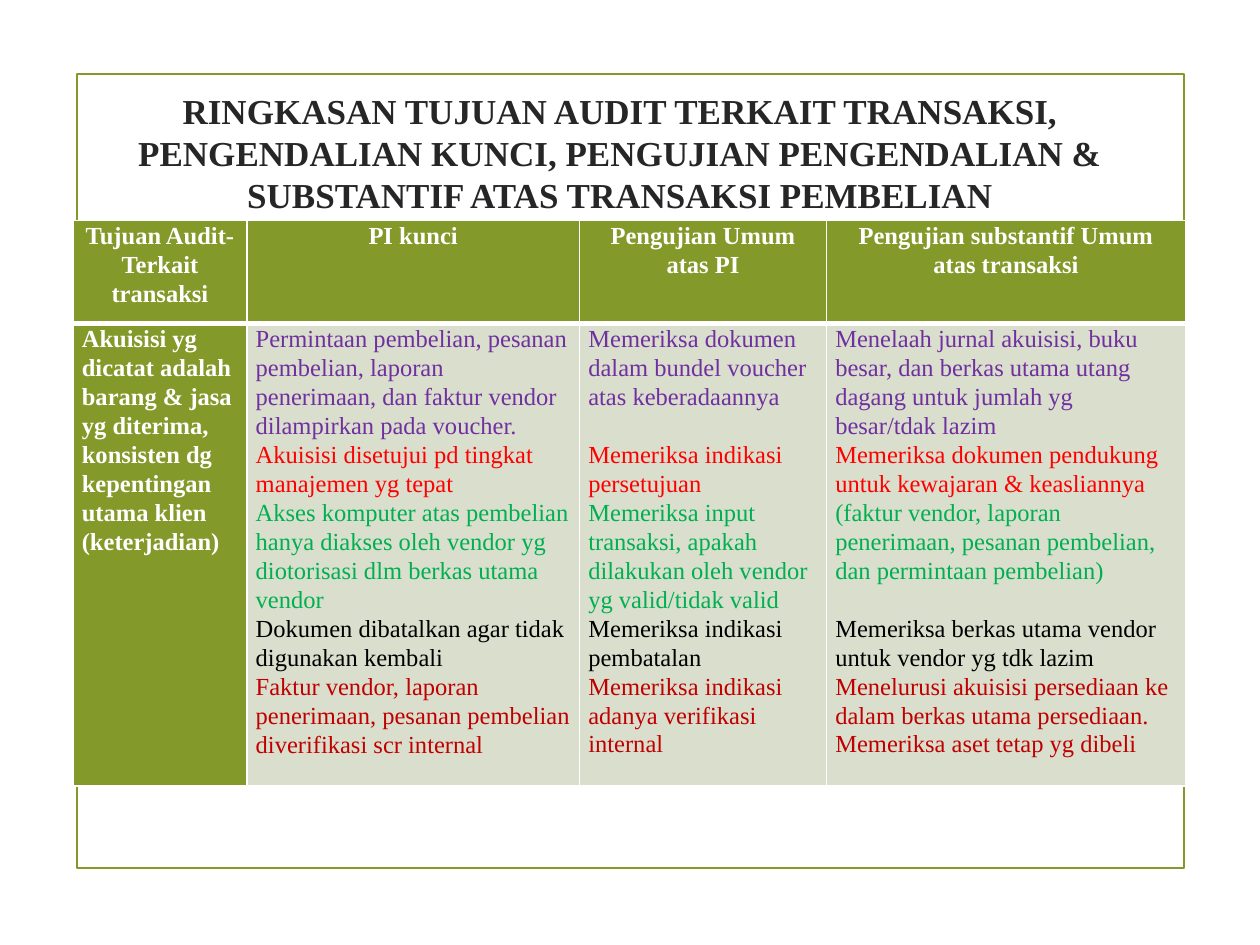
from dataclasses import dataclass

from lxml.etree import SubElement
from pptx import Presentation
from pptx.dml.color import RGBColor
from pptx.enum.shapes import MSO_SHAPE as Shape
from pptx.enum.text import MSO_ANCHOR as Anchor, MSO_AUTO_SIZE as AutoSize, PP_ALIGN as Align
from pptx.oxml.ns import qn
from pptx.util import Inches, Pt


@dataclass(frozen=True)
class Theme:
    """Colours, font and type sizes of the slide."""
    font: str = "Times New Roman"
    title_size: int = 20
    table_size: int = 14
    gap: float = 16.5
    spacing: float = 1.07
    olive: str = "83992A"
    pale: str = "D9DECD"
    white: str = "FFFFFF"
    ink: str = "262626"
    purple: str = "7030A0"
    red: str = "FF0000"
    green: str = "00B050"
    black: str = "000000"
    crimson: str = "C00000"


THEME = Theme()
TITLE = ("RINGKASAN TUJUAN AUDIT TERKAIT TRANSAKSI, PENGENDALIAN KUNCI, "
         "PENGUJIAN PENGENDALIAN & SUBSTANTIF ATAS TRANSAKSI PEMBELIAN")
COLUMNS = (1.38, 2.64, 1.96, 2.85)
ROWS = (0.82, 3.67)
HEADERS = ("Tujuan Audit-Terkait transaksi", "PI kunci", "Pengujian Umum atas PI",
           "Pengujian substantif Umum atas transaksi")
OBJECTIVE = ("Akuisisi yg dicatat adalah barang & jasa yg diterima, konsisten dg "
             "kepentingan utama klien (keterjadian)")
KEY_CONTROLS = [
    [("Permintaan pembelian, pesanan pembelian, laporan penerimaan, dan faktur vendor "
      "dilampirkan pada voucher.", THEME.purple)],
    [("Akuisisi disetujui pd tingkat manajemen yg tepat", THEME.red)],
    [("Akses komputer atas pembelian hanya diakses oleh vendor yg diotorisasi dlm berkas "
      "utama vendor", THEME.green)],
    [("Dokumen dibatalkan agar tidak digunakan kembali", THEME.black)],
    [("Faktur vendor, laporan penerimaan, pesanan pembelian diverifikasi scr internal",
      THEME.crimson)],
]
CONTROL_TESTS = [
    [("Memeriksa dokumen dalam bundel voucher atas keberadaannya", THEME.purple)],
    [("Memeriksa indikasi persetujuan", THEME.red)],
    [("Memeriksa input transaksi, apakah dilakukan oleh vendor yg valid/tidak valid",
      THEME.green)],
    [("Memeriksa indikasi pembatalan", THEME.black)],
    [("Memeriksa indikasi adanya verifikasi internal", THEME.crimson)],
]
SUBSTANTIVE_TESTS = [
    [("Menelaah jurnal akuisisi, buku besar, dan berkas utama utang dagang untuk jumlah yg "
      "besar/tdak lazim", THEME.purple)],
    [("Memeriksa dokumen pendukung untuk kewajaran & keasliannya ", THEME.red),
     ("(faktur vendor, laporan penerimaan, pesanan pembelian, dan permintaan pembelian)",
      THEME.green)],
    [("Memeriksa berkas utama vendor untuk vendor yg tdk lazim", THEME.black)],
    [("Menelurusi akuisisi persediaan ke dalam berkas utama persediaan. Memeriksa aset "
      "tetap yg dibeli", THEME.crimson)],
]


def apply_format(target, values):
    """Set each named attribute on the target."""
    for name, value in values.items():
        setattr(target, name, value)


def add_span(para, text, size, color, bold):
    """Add one formatted run to a paragraph."""
    span = para.add_run()
    span.text = text
    apply_format(span.font, {"name": THEME.font, "size": Pt(size), "bold": bold})
    span.font.color.rgb = RGBColor.from_string(color)


def add_title(page):
    """Place and format the title placeholder."""
    box = page.shapes.title
    apply_format(box, {"left": Inches(0.42), "top": Inches(0.67),
                       "width": Inches(9), "height": Inches(1.08)})
    apply_format(box.text_frame, {"word_wrap": True, "auto_size": AutoSize.NONE,
                                  "vertical_anchor": Anchor.MIDDLE})
    para = box.text_frame.paragraphs[0]
    para.alignment = Align.CENTER
    add_span(para, TITLE, THEME.title_size, THEME.ink, True)


def add_frame(page):
    """Draw the thin border around the content."""
    frame = page.shapes.add_shape(Shape.RECTANGLE, Inches(0.61), Inches(0.59),
                                  Inches(8.79), Inches(6.3))
    frame.shadow.inherit = False
    frame.fill.background()
    frame.line.color.rgb = RGBColor.from_string(THEME.olive)
    frame.line.width = Pt(1.25)


def set_borders(cell, top, bottom):
    """Give a cell white borders, with top and bottom widths in points."""
    properties = cell._tc.get_or_add_tcPr()
    for side, width in {"L": 1, "R": 1, "T": top, "B": bottom}.items():
        line = SubElement(properties, qn(f"a:ln{side}"), w=str(Pt(width)))
        fill = SubElement(line, qn("a:solidFill"))
        SubElement(fill, qn("a:srgbClr"), val=THEME.white)


def fill_cell(cell, paragraphs, fill, align=Align.LEFT, bold=False, gap_before=None,
              top=1, bottom=1):
    """Write coloured paragraphs into a cell, with a line of space before one of them."""
    apply_format(cell, {"margin_left": Inches(0.07), "margin_right": Inches(0.07),
                        "margin_top": 0, "margin_bottom": 0})
    set_borders(cell, top, bottom)
    cell.fill.solid()
    cell.fill.fore_color.rgb = RGBColor.from_string(fill)
    for index, spans in enumerate(paragraphs):
        para = cell.text_frame.add_paragraph() if index else cell.text_frame.paragraphs[0]
        apply_format(para, {"alignment": align, "line_spacing": THEME.spacing})
        if index and index == gap_before:
            para.space_before = Pt(THEME.gap)
        for text, color in spans:
            add_span(para, text, THEME.table_size, color, bold)


def add_audit_table(page):
    """Add the table of audit objectives, controls and tests."""
    table = page.shapes.add_table(len(ROWS), len(COLUMNS), Inches(0.58), Inches(1.75),
                                  Inches(sum(COLUMNS)), Inches(sum(ROWS))).table
    for column, width in zip(table.columns, COLUMNS):
        column.width = Inches(width)
    for row, height in zip(table.rows, ROWS):
        row.height = Inches(height)
    for index, text in enumerate(HEADERS):
        fill_cell(table.cell(0, index), [[(text, THEME.white)]], THEME.olive,
                  Align.CENTER, bold=True, bottom=3)
    fill_cell(table.cell(1, 0), [[(OBJECTIVE, THEME.white)]], THEME.olive, bold=True, top=3)
    bodies = ((KEY_CONTROLS, None), (CONTROL_TESTS, 1), (SUBSTANTIVE_TESTS, 2))
    for index, (paragraphs, gap_before) in enumerate(bodies, start=1):
        fill_cell(table.cell(1, index), paragraphs, THEME.pale, gap_before=gap_before, top=3)


def main():
    """Build and save the slide."""
    deck = Presentation()
    apply_format(deck, {"slide_width": Inches(10), "slide_height": Inches(7.5)})
    page = deck.slides.add_slide(deck.slide_layouts[5])
    add_frame(page)
    add_title(page)
    add_audit_table(page)
    deck.save("out.pptx")


if __name__ == "__main__":
    main()
